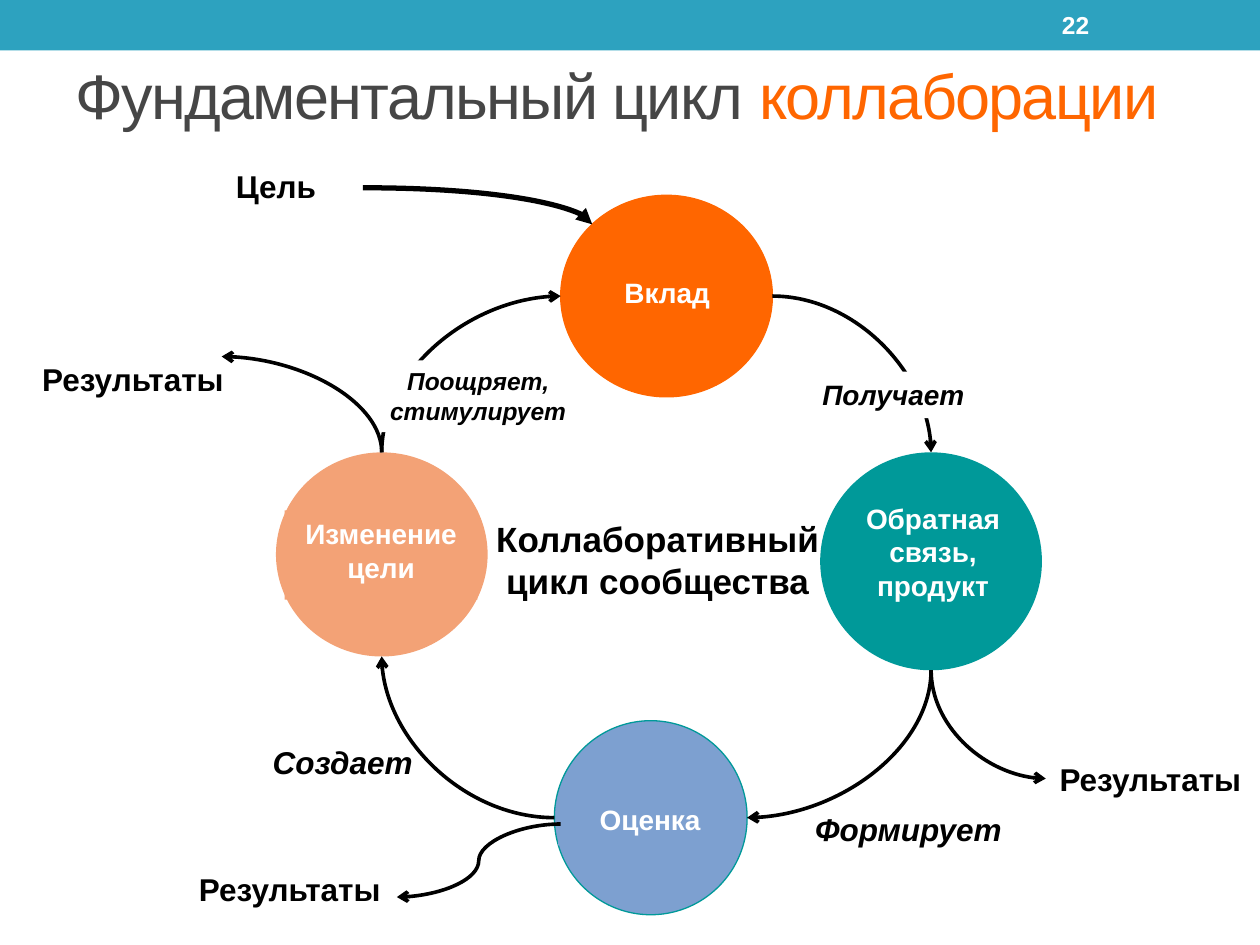
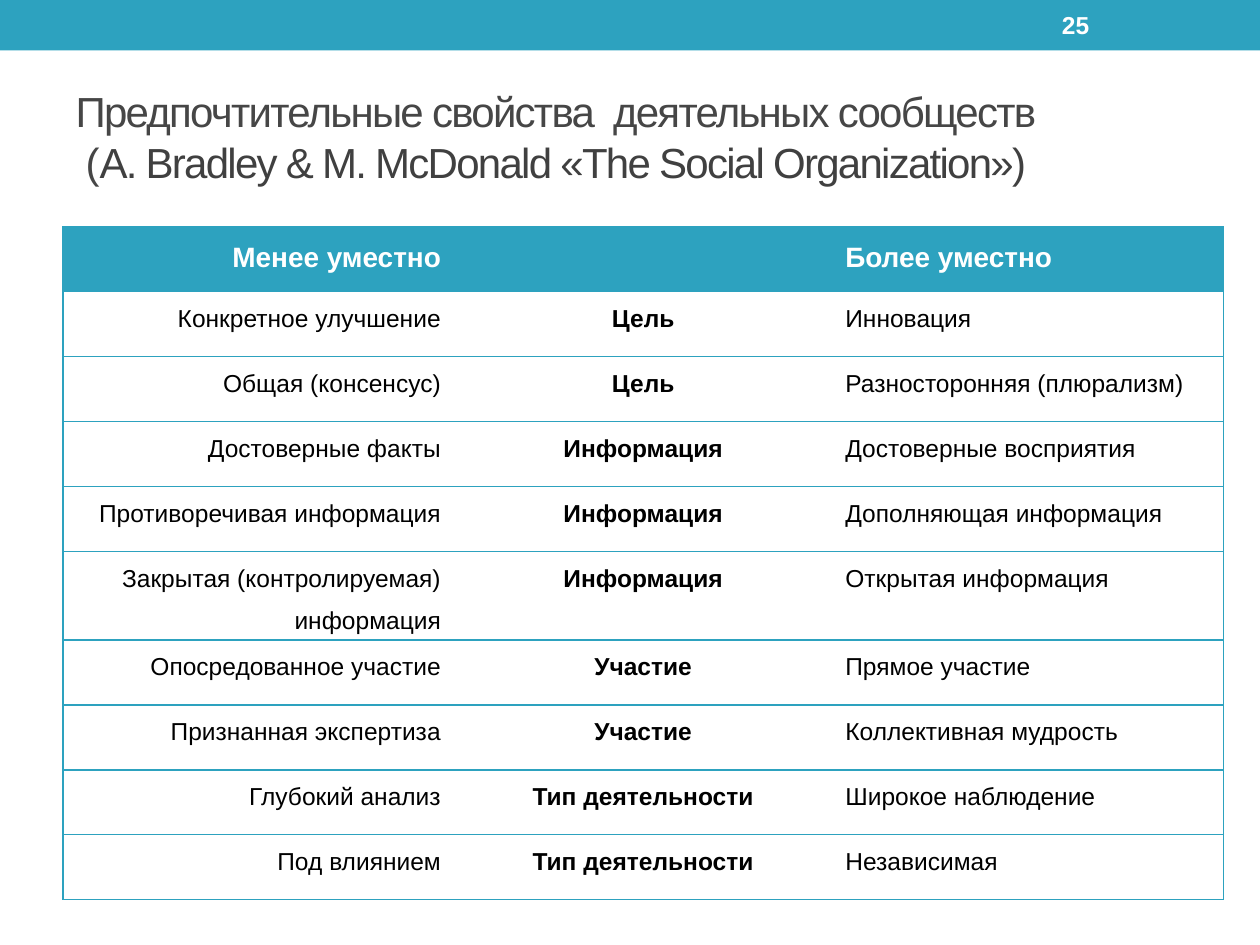
from lxml.etree import SubElement
from pptx import Presentation
from pptx.dml.color import RGBColor
from pptx.enum.shapes import MSO_CONNECTOR, MSO_SHAPE
from pptx.enum.text import MSO_ANCHOR, MSO_AUTO_SIZE, PP_ALIGN
from pptx.oxml.ns import qn
from pptx.util import Inches, Pt

FONT = "Arial"
TEAL, GREY, DARK = "2DA2BF", "464646", "404040"
ORANGE, PEACH, GREEN, BLUE = "FF6600", "F3A276", "009999", "7DA0D0"
BLACK, WHITE = "000000", "FFFFFF"
NO_STYLE = "{2D5ABB26-0587-4C30-8999-92F81FD0307C}"
TOP, LEFT, BOTTOM, RIGHT = range(4)

NODES = {
    "change": ((2.19, 2.39, 1.68, 1.62), PEACH, None,
               "Изменение цели", (2.26, 2.85, 1.53, 0.71), PEACH),
    "input": ((4.45, 0.35, 1.68, 1.6), ORANGE, ORANGE,
              "Вклад", (4.4, 0.94, 1.79, 0.4), None),
    "feedback": ((6.51, 2.39, 1.76, 1.73), GREEN, None,
                 "Обратная связь, продукт", (6.73, 2.73, 1.35, 0.91), GREEN),
    "review": ((4.4, 4.52, 1.53, 1.54), BLUE, GREEN,
               "Оценка", (4.43, 5.12, 1.46, 0.39), BLUE),
}
LABELS = [
    ("Цель", (1.5, 0.08, 1.38, 0.4), 18, False, None),
    ("Коллаборативный цикл сообщества", (3.82, 2.86, 2.8, 0.77), 20, False, None),
    ("Получает", (6.34, 1.75, 1.5, 0.37), 16, True, WHITE),
    ("Формирует", (6.33, 5.18, 1.76, 0.4), 18, True, None),
    ("Создает", (2.01, 4.65, 1.42, 0.4), 18, True, None),
    ("Поощряет, стимулирует", (2.97, 1.66, 1.65, 0.57), 14, True, WHITE),
    ("Результаты", (8.3, 4.78, 1.66, 0.4), 18, False, None),
    ("Результаты", (0.2, 1.61, 1.71, 0.4), 18, False, None),
    ("Результаты", (1.47, 5.66, 1.66, 0.4), 18, False, None),
]
ROWS = [
    ("Менее уместно", "", "Более уместно"),
    ("Конкретное улучшение", "Цель", "Инновация"),
    ("Общая (консенсус)", "Цель", "Разносторонняя (плюрализм)"),
    ("Достоверные факты", "Информация", "Достоверные восприятия"),
    ("Противоречивая информация", "Информация", "Дополняющая информация"),
    ("Закрытая (контролируемая) информация", "Информация", "Открытая информация"),
    ("Опосредованное участие", "Участие", "Прямое участие"),
    ("Признанная экспертиза", "Участие", "Коллективная мудрость"),
    ("Глубокий анализ", "Тип деятельности", "Широкое наблюдение"),
    ("Под влиянием", "Тип деятельности", "Независимая"),
]


def rgb(value):
    """Turn a hex string into a colour."""
    return RGBColor.from_string(value)


def inches(box):
    """Convert a tuple of numbers to lengths."""
    return [Inches(v) for v in box]


def shift(box, origin):
    """Move a box or point by the left and top of the origin box."""
    return (box[0] + origin[0], box[1] + origin[1], *box[2:])


def style_run(r, size, color, bold=False, italic=False):
    """Set the character format of a run."""
    r.font.name, r.font.size = FONT, Pt(size)
    r.font.bold, r.font.italic = bold, italic
    r.font.color.rgb = rgb(color)


def add_text(s, box, text, size, color, italic=False, fill=None, align=PP_ALIGN.CENTER):
    """Add a wrapped bold text box, optionally filled."""
    sp = s.shapes.add_textbox(*inches(box))
    if fill:
        sp.fill.solid()
        sp.fill.fore_color.rgb = rgb(fill)
    tf = sp.text_frame
    tf.word_wrap = True
    p = tf.paragraphs[0]
    p.text, p.alignment, p.space_before = text, align, Pt(9.6)
    style_run(p.runs[0], size, color, True, italic)
    return sp


def add_solid(s, kind, box, fill, line=None):
    """Add a flat preset shape."""
    sp = s.shapes.add_shape(kind, *inches(box))
    sp.shadow.inherit = False
    sp.fill.solid()
    sp.fill.fore_color.rgb = rgb(fill)
    if line:
        sp.line.color.rgb, sp.line.width = rgb(line), Pt(0.75)
    else:
        sp.line.fill.background()


def new_slide(prs, number, box, size, text, accent, accent_color):
    """Start a slide with the band, the number and a two-colour title."""
    s = prs.slides.add_slide(prs.slide_layouts[5])
    add_solid(s, MSO_SHAPE.RECTANGLE, (0, 0, 10, 0.4), TEAL)
    title = s.shapes.title
    title.left, title.top, title.width, title.height = inches(box)
    tf = title.text_frame
    tf.auto_size, tf.vertical_anchor = MSO_AUTO_SIZE.NONE, MSO_ANCHOR.MIDDLE
    p = tf.paragraphs[0]
    p.text, p.alignment = text, PP_ALIGN.LEFT
    for r in p.runs:
        style_run(r, size, GREY)
    r = p.add_run()
    r.text = accent
    style_run(r, size, accent_color)
    for r in p.runs:
        r.font._element.set("spc", "-100")
    sp = add_text(s, (8.33, 0.02, 1.17, 0.36), number, 14, WHITE, align=PP_ALIGN.LEFT)
    sp.text_frame.vertical_anchor = MSO_ANCHOR.MIDDLE
    return s


def add_curve(s, start, end, arrow_end, width=2.08, arrow="arrow", preset="curvedConnector2"):
    """Add a curve that leaves its start horizontally."""
    c = s.shapes.add_connector(MSO_CONNECTOR.CURVE, *inches(start + end))
    c.line.color.rgb, c.line.width = rgb(BLACK), Pt(width)
    spPr = c._element.spPr
    spPr.find(qn("a:prstGeom")).set("prst", preset)
    SubElement(spPr.find(qn("a:ln")), qn(f"a:{arrow_end}End"), type=arrow)
    SubElement(spPr, qn("a:effectLst"))


def draw_cycle(s, box):
    """Draw the circles, their links, the labels and the outputs."""
    def at(x, y):
        return shift((x, y), box)

    def side(name, index):
        x, y, w, h = NODES[name][0]
        return at(*((x + w / 2, y), (x, y + h / 2), (x + w / 2, y + h), (x + w, y + h / 2))[index])

    for circle, fill, line, text, text_box, text_fill in NODES.values():
        add_solid(s, MSO_SHAPE.OVAL, shift(circle, box), fill, line)
        add_text(s, shift(text_box, box), text, 16, WHITE, fill=text_fill)
    add_curve(s, at(2.88, 0.29), at(4.7, 0.58), "tail", 3, "triangle")
    add_curve(s, side("input", RIGHT), side("feedback", TOP), "tail")
    add_curve(s, side("review", RIGHT), side("feedback", BOTTOM), "head")
    add_curve(s, side("review", LEFT), side("change", BOTTOM), "tail")
    add_curve(s, side("input", LEFT), side("change", TOP), "head")
    for text, label_box, size, italic, fill in LABELS:
        add_text(s, shift(label_box, box), text, size, BLACK, italic, fill)
    add_curve(s, at(8.3, 4.98), side("feedback", BOTTOM), "head")
    add_curve(s, at(1.76, 1.63), side("change", TOP), "head")
    add_curve(s, at(3.15, 5.92), at(4.45, 5.34), "head", preset="curvedConnector3")


def add_borders(cell, edges):
    """Draw the named edges of a cell and hide the others."""
    tcPr = cell._tc.get_or_add_tcPr()
    for edge in "LRTB":
        ln = SubElement(tcPr, qn(f"a:ln{edge}"), w=str(Pt(0.75)))
        if edge in edges:
            SubElement(SubElement(ln, qn("a:solidFill")), qn("a:srgbClr"), val=TEAL)
        else:
            SubElement(ln, qn("a:noFill"))


def draw_comparison(s, box):
    """Fill the box with the three-column comparison table."""
    table = s.shapes.add_table(len(ROWS), 3, *inches(box)).table
    table._tbl.tblPr.find(qn("a:tableStyleId")).text = NO_STYLE
    aligns = (PP_ALIGN.RIGHT, PP_ALIGN.CENTER, PP_ALIGN.LEFT)
    for i, texts in enumerate(ROWS):
        header = i == 0
        for j, text in enumerate(texts):
            cell = table.cell(i, j)
            add_borders(cell, "TB" + ("L", "", "R")[j])
            cell.fill.solid()
            cell.fill.fore_color.rgb = rgb(TEAL if header else WHITE)
            cell.margin_left = cell.margin_right = Inches(0.07)
            cell.margin_top = cell.margin_bottom = 0
            p = cell.text_frame.paragraphs[0]
            p.text, p.alignment = text, aligns[j]
            p.line_spacing, p.space_before = 1.5, Pt(6)
            for r in p.runs:
                style_run(r, 16 if header else 14, WHITE if header else BLACK, header or j == 1)


def main():
    """Build and save the presentation."""
    prs = Presentation()
    prs.slide_width, prs.slide_height = Inches(10), Inches(7.5)
    s = new_slide(prs, "22", (0.5, 0.41, 9.5, 0.68), 36,
                  "Фундаментальный цикл ", "коллаборации", ORANGE)
    draw_cycle(s, (0, 1.2, 10, 6.3))
    s = new_slide(prs, "25", (0.5, 0.62, 9.22, 0.92), 24,
                  "Предпочтительные свойства  деятельных сообществ\v (",
                  "A. Bradley & M. McDonald «The Social Organization»)", DARK)
    draw_comparison(s, (0.5, 1.8, 9.21, 5.16))
    prs.save("out.pptx")


if __name__ == "__main__":
    main()
